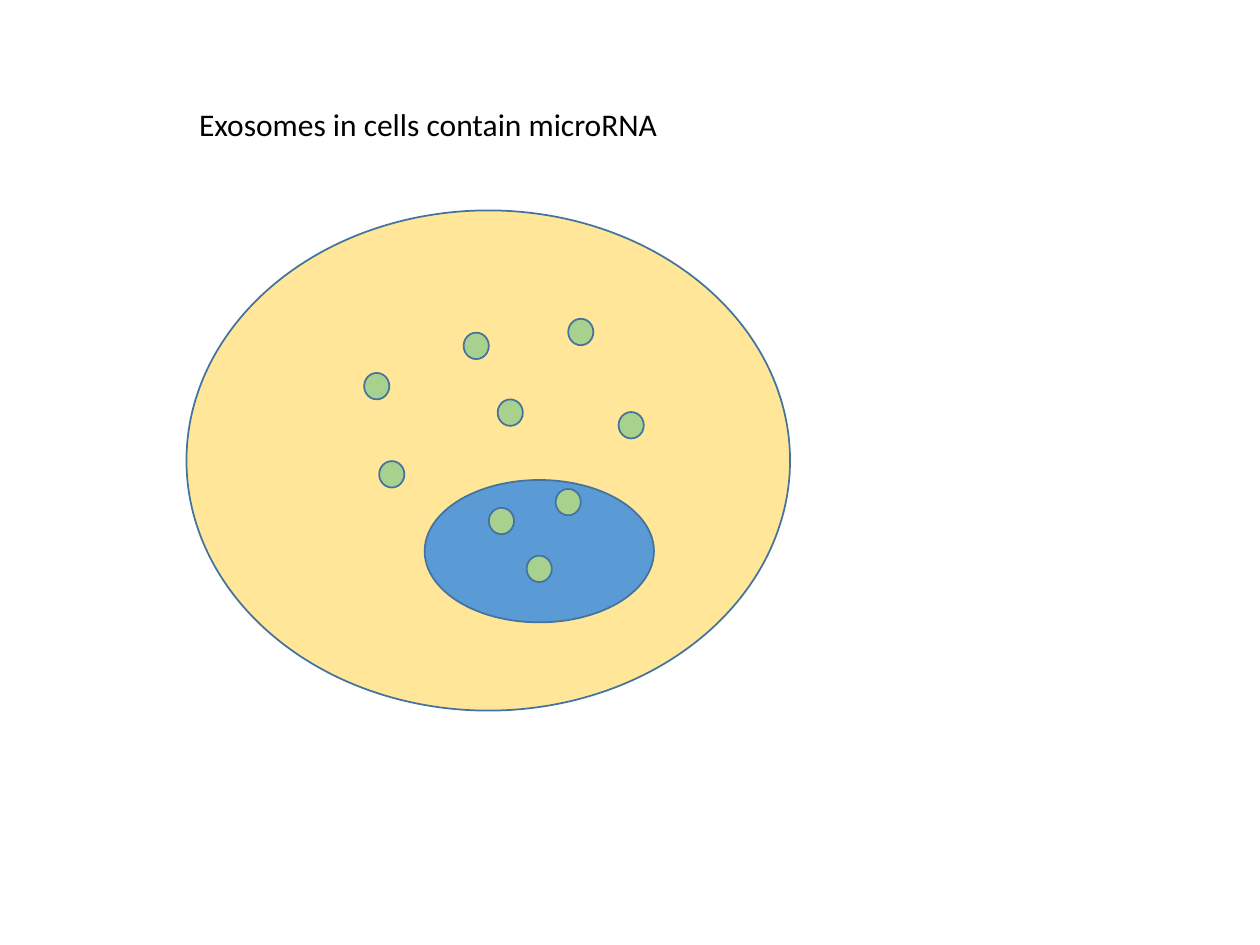
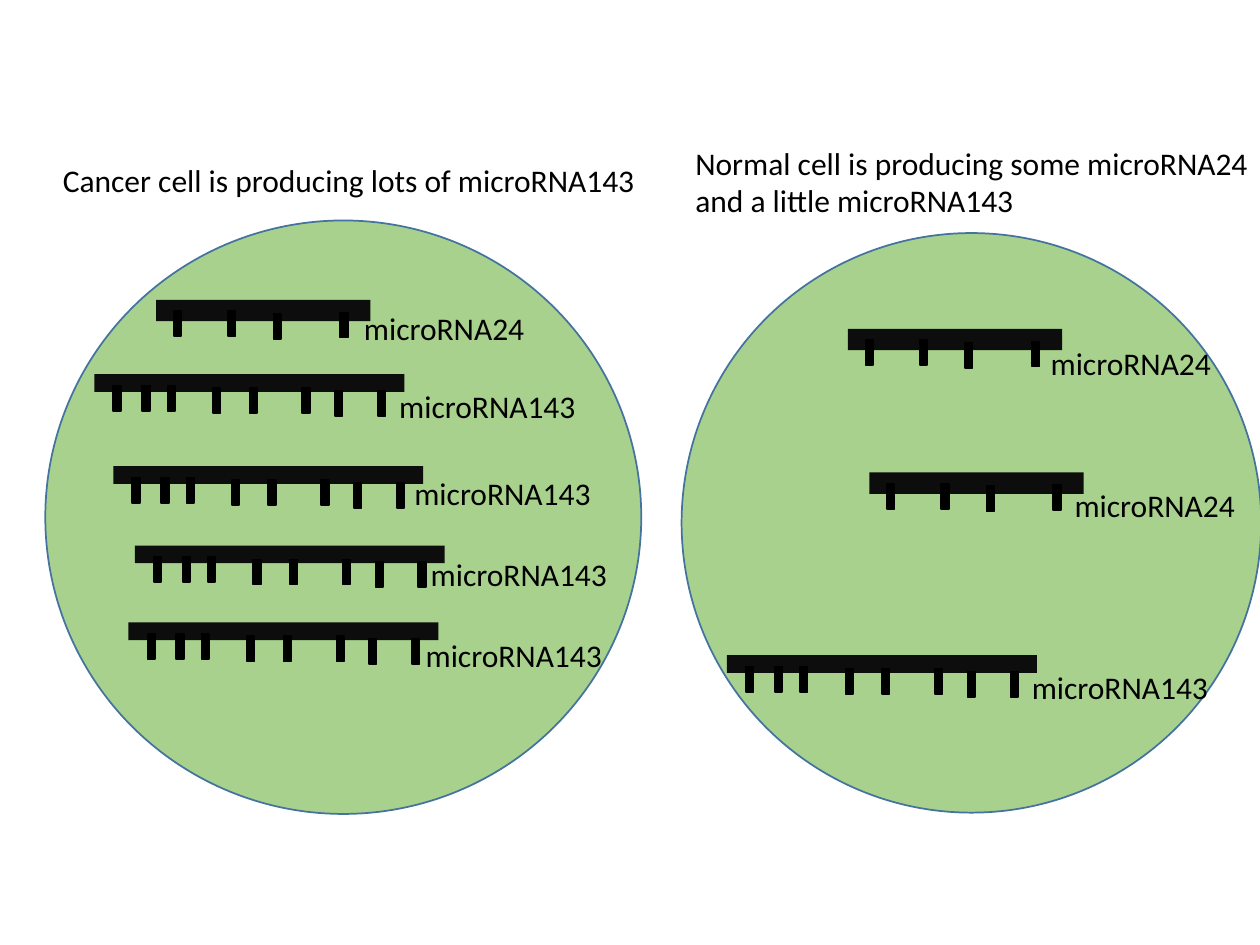
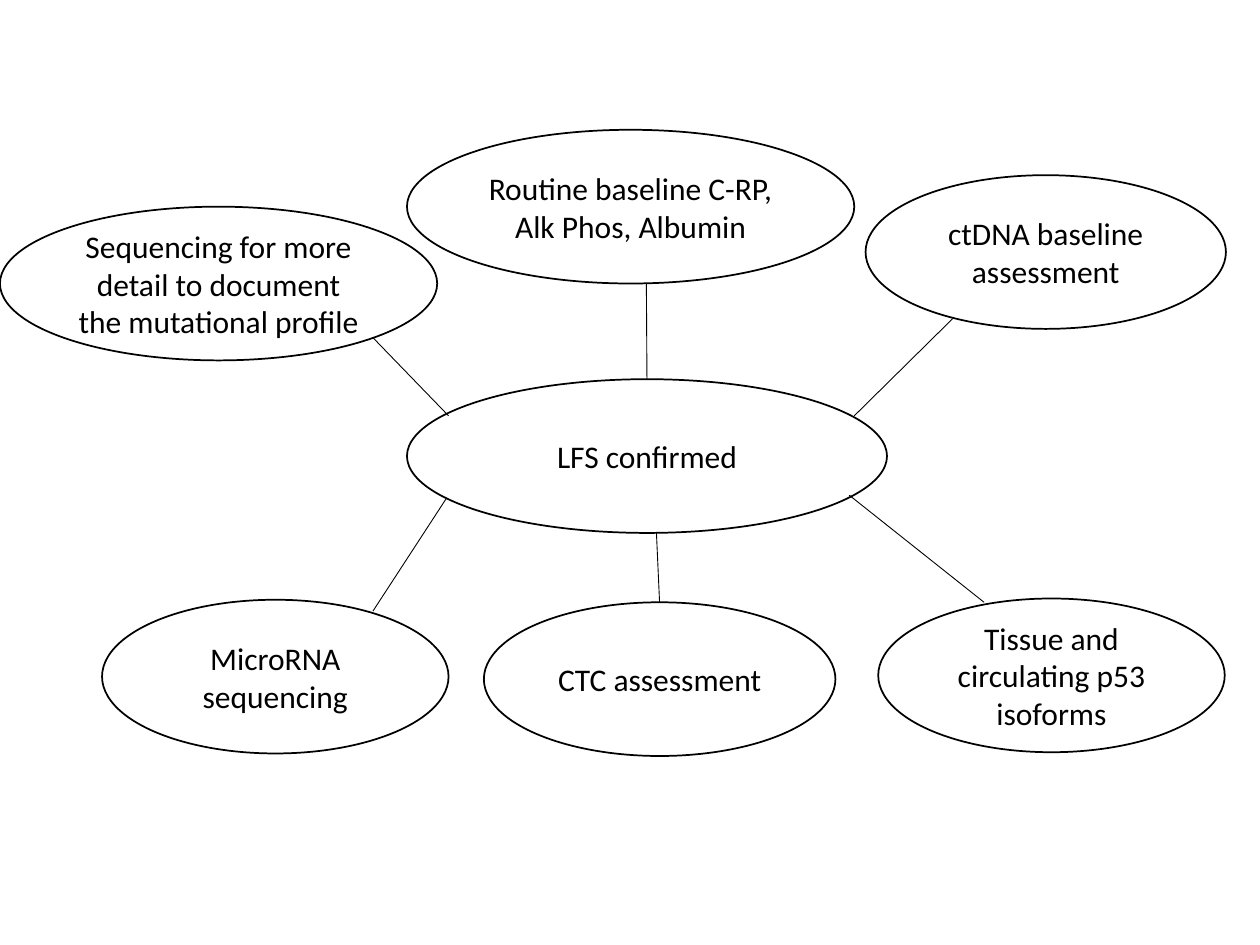
from dataclasses import dataclass

from lxml.etree import SubElement
from pptx import Presentation
from pptx.dml.color import RGBColor
from pptx.enum.shapes import MSO_CONNECTOR, MSO_SHAPE
from pptx.enum.text import MSO_ANCHOR, MSO_AUTO_SIZE, PP_ALIGN
from pptx.oxml.ns import qn
from pptx.util import Inches, Pt

TITLE_ONLY, BLANK = 5, 6


@dataclass(frozen=True)
class Theme:
    font: str = "Calibri"
    text_size: float = 18
    outline_width: float = 1
    link_width: float = 0.5
    ink: str = "000000"
    paper: str = "FFFFFF"
    outline: str = "43739E"
    cytoplasm: str = "FFE699"
    nucleus: str = "5B9BD5"
    green: str = "A9D18E"
    backbone: str = "0D0D0D"


@dataclass(frozen=True)
class Strand:
    """A microRNA kind; bases are (x, y) offsets from the backbone corner."""
    name: str
    width: float
    height: float
    label_width: float
    bases: tuple


MIR24 = Strand("microRNA24", 1.7, 0.17, 1.49,
               ((0.14, 0.09), (0.57, 0.09), (0.93, 0.11), (1.46, 0.1)))
MIR143 = Strand("microRNA143", 2.46, 0.14, 1.61,
                ((0.15, 0.09), (0.38, 0.09), (0.58, 0.09), (0.94, 0.11),
                 (1.23, 0.11), (1.65, 0.11), (1.91, 0.13), (2.25, 0.13)))


def inches(*lengths):
    return [Inches(length) for length in lengths]


class Deck:
    def __init__(self, theme):
        self.theme = theme
        self.presentation = Presentation()
        self.presentation.slide_width, self.presentation.slide_height = inches(10, 7.5)
        self.slide = None

    def new_slide(self, layout=BLANK):
        self.slide = self.presentation.slides.add_slide(
            self.presentation.slide_layouts[layout])

    def add_lines(self, frame, lines, align):
        for number, line in enumerate(lines):
            paragraph = frame.paragraphs[0] if number == 0 else frame.add_paragraph()
            paragraph.alignment = align
            run = paragraph.add_run()
            run.text = line
            run.font.name = self.theme.font
            run.font.size = Pt(self.theme.text_size)
            run.font.color.rgb = RGBColor.from_string(self.theme.ink)

    def add_unwrapped(self, frame, lines):
        frame.word_wrap = False
        frame.auto_size = MSO_AUTO_SIZE.SHAPE_TO_FIT_TEXT
        frame.vertical_anchor = MSO_ANCHOR.TOP
        self.add_lines(frame, lines, PP_ALIGN.LEFT)

    def title(self, box, text):
        heading = self.slide.shapes.title
        heading.left, heading.top, heading.width, heading.height = inches(*box)
        self.add_unwrapped(heading.text_frame, [text])

    def label(self, box, *lines):
        textbox = self.slide.shapes.add_textbox(*inches(*box))
        self.add_unwrapped(textbox.text_frame, lines)

    def shape(self, kind, box, fill, outline=None, text=None):
        shape = self.slide.shapes.add_shape(kind, *inches(*box))
        shape.shadow.inherit = False
        shape.fill.solid()
        shape.fill.fore_color.rgb = RGBColor.from_string(fill)
        if outline:
            shape.line.color.rgb = RGBColor.from_string(outline)
            shape.line.width = Pt(self.theme.outline_width)
        else:
            shape.line.fill.background()
        if text:
            shape.text_frame.vertical_anchor = MSO_ANCHOR.MIDDLE
            self.add_lines(shape.text_frame, [text], PP_ALIGN.CENTER)
        return shape

    def cell(self, box, fill):
        self.shape(MSO_SHAPE.OVAL, box, fill, self.theme.outline)

    def topic(self, box, text):
        return self.shape(MSO_SHAPE.OVAL, box, self.theme.paper, self.theme.ink, text)

    def strand(self, strand, left, top):
        self.shape(MSO_SHAPE.RECTANGLE, (left, top, strand.width, strand.height),
                   self.theme.backbone)
        for dx, dy in strand.bases:
            self.shape(MSO_SHAPE.RECTANGLE, (left + dx, top + dy, 0.06, 0.2),
                       self.theme.ink, self.theme.ink)

    def link(self, start, end, top_of=None):
        """Draw a line, joined at its start to the top of a topic if one is given."""
        line = self.slide.shapes.add_connector(
            MSO_CONNECTOR.STRAIGHT, *inches(*start, *end))
        line.line.color.rgb = RGBColor.from_string(self.theme.ink)
        line.line.width = Pt(self.theme.link_width)
        SubElement(line._element.spPr, qn("a:effectLst"))
        if top_of is not None:
            line.begin_connect(top_of, 0)


def exosome_slide(deck):
    deck.new_slide(TITLE_ONLY)
    deck.title((1.48, 0.78, 3.88, 0.4), "Exosomes in cells contain microRNA")
    deck.cell((1.48, 1.67, 4.79, 3.97), deck.theme.cytoplasm)
    deck.cell((3.37, 3.81, 1.82, 1.13), deck.theme.nucleus)
    exosomes = [(4.41, 3.88), (3.88, 4.03), (3.68, 2.64), (3.95, 3.17), (4.51, 2.53),
                (2.89, 2.96), (4.18, 4.41), (3.01, 3.66), (4.91, 3.27)]
    for left, top in exosomes:
        deck.cell((left, top, 0.2, 0.21), deck.theme.green)


def production_slide(deck):
    deck.new_slide()
    deck.cell((0.36, 1.75, 4.73, 4.71), deck.theme.green)
    deck.cell((5.41, 1.85, 4.6, 4.6), deck.theme.green)
    deck.label((0.4, 1.23, 4.82, 0.4), "Cancer cell is producing lots of microRNA143")
    deck.label((5.42, 1.09, 4.64, 0.71),
               "Normal cell is producing some microRNA24", "and a little microRNA143")
    # kind, backbone corner, label corner
    strands = [
        (MIR24, (1.24, 2.38), (2.79, 2.4)),
        (MIR143, (0.75, 2.97), (3.07, 3.02)),
        (MIR143, (0.9, 3.7), (3.19, 3.71)),
        (MIR143, (1.07, 4.33), (3.32, 4.36)),
        (MIR143, (1.02, 4.94), (3.28, 5)),
        (MIR24, (6.73, 2.61), (8.24, 2.68)),
        (MIR24, (6.9, 3.75), (8.43, 3.81)),
        (MIR143, (5.77, 5.2), (8.09, 5.25)),
    ]
    for strand, backbone, name_corner in strands:
        deck.strand(strand, *backbone)
        deck.label((*name_corner, strand.label_width, 0.4), strand.name)


def assessment_slide(deck):
    deck.new_slide()
    height = 1.22
    confirmed = deck.topic((3.23, 3.01, 3.81, height), "LFS confirmed")
    ctc = deck.topic((3.84, 4.78, 2.79, height), "CTC assessment")
    assessments = [
        (0, 1.64, 3.47, "Sequencing for more detail to document the mutational profile"),
        (3.23, 1.03, 3.55, "Routine baseline C-RP, Alk Phos, Albumin"),
        (6.87, 1.39, 2.86, "ctDNA baseline assessment"),
        (0.81, 4.76, 2.75, "MicroRNA sequencing"),
        (6.97, 4.75, 2.75, "Tissue and circulating p53 isoforms"),
    ]
    for left, top, width, text in assessments:
        deck.topic((left, top, width, height), text)
    links = [
        ((3.56, 3.3), (2.96, 2.68), None),
        ((5.14, 3.01), (5.13, 2.25), confirmed),
        ((6.78, 3.3), (7.56, 2.53), None),
        ((3.54, 3.96), (2.96, 4.85), None),
        ((7.81, 4.78), (6.74, 3.93), None),
        ((5.24, 4.78), (5.21, 4.23), ctc),
    ]
    for start, end, joined_topic in links:
        deck.link(start, end, joined_topic)


def main():
    deck = Deck(Theme())
    exosome_slide(deck)
    production_slide(deck)
    assessment_slide(deck)
    deck.presentation.save("out.pptx")


if __name__ == "__main__":
    main()
